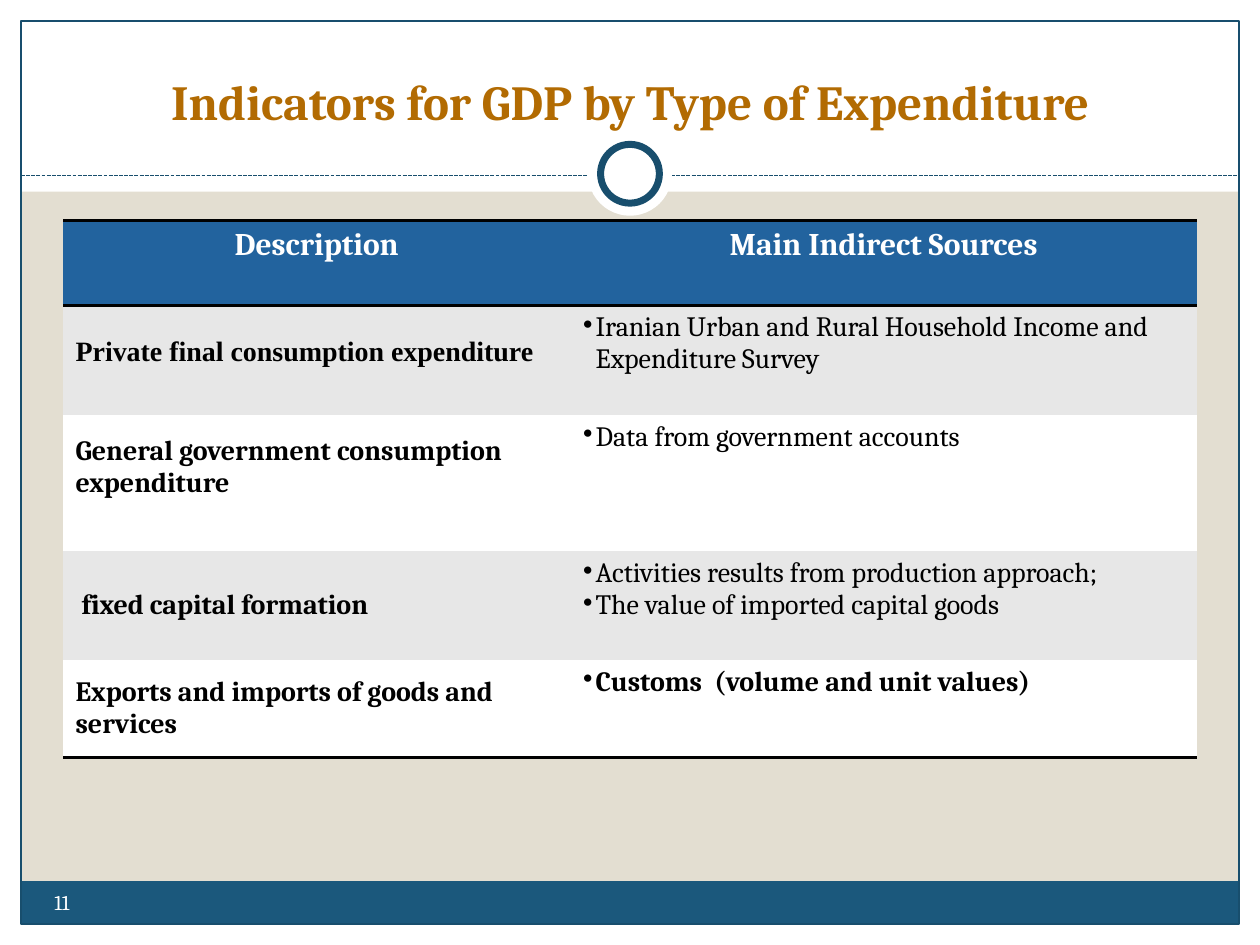
from dataclasses import dataclass
from lxml.etree import SubElement as Sub
from pptx import Presentation
from pptx.dml.color import RGBColor as RGB
from pptx.enum.dml import MSO_LINE as Dash
from pptx.enum.shapes import MSO_CONNECTOR as Conn, MSO_SHAPE as Kind
from pptx.enum.text import MSO_ANCHOR as Anchor, PP_ALIGN as Align
from pptx.oxml import parse_xml
from pptx.oxml.ns import nsdecls, qn
from pptx.util import Pt

PLAIN = "{2D5ABB26-0587-4C30-8999-92F81FD0307C}"


@dataclass(frozen=True)
class Theme:
    font: str = "Cambria"
    serif: str = "Times New Roman"
    sand: str = "E3DED1"
    white: str = "FFFFFF"
    black: str = "000000"
    gray: str = "E7E7E7"
    blue: str = "22639E"
    teal: str = "1B587C"
    edge: str = "184E6D"
    gold: str = "B26B02"
    title: int = 28
    head: int = 18
    body: int = 16
    small: int = 12


class Deck:
    def __init__(self, theme):
        self.theme = theme
        self.file = Presentation()
        self.file.slide_width, self.file.slide_height = Pt(720), Pt(540)
        self.slide = self.file.slides.add_slide(self.file.slide_layouts[5])
        self.shapes = self.slide.shapes
        fill = self.slide.background.fill
        fill.solid()
        fill.fore_color.rgb = RGB.from_string(theme.sand)

    def shape(self, kind, box, fill=None, line=None, width=0.75):
        item = self.shapes.add_shape(kind, *map(Pt, box))
        item.shadow.inherit = False
        if fill:
            item.fill.solid()
            item.fill.fore_color.rgb = RGB.from_string(fill)
        else:
            item.fill.background()
        if line:
            item.line.color.rgb = RGB.from_string(line)
            item.line.width = Pt(width)
        else:
            item.line.fill.background()

    def dashes(self, left, right, y):
        item = self.shapes.add_connector(Conn.STRAIGHT, *map(Pt, (left, y, right, y)))
        item.line.color.rgb = RGB.from_string(self.theme.edge)
        item.line.width = Pt(0.75)
        item.line.dash_style = Dash.SQUARE_DOT
        Sub(item._element.spPr, qn("a:effectLst"))

    def style(self, para, size, color, bold=False, align=Align.LEFT, font=None):
        para.alignment = align
        para.font.name = font or self.theme.font
        para.font.size = Pt(size)
        para.font.bold = bold
        para.font.color.rgb = RGB.from_string(color)

    def title(self, text, box):
        item = self.shapes.title
        item.left, item.top, item.width, item.height = map(Pt, box)
        self.shapes._spTree.append(item._element)
        frame = item.text_frame
        frame.text = text
        frame.vertical_anchor = Anchor.BOTTOM
        self.style(frame.paragraphs[0], self.theme.title, self.theme.gold, True, Align.CENTER)

    def label(self, text, box):
        frame = self.shapes.add_textbox(*map(Pt, box)).text_frame
        frame.word_wrap = True
        frame.text = text
        self.style(frame.paragraphs[0], self.theme.small, self.theme.white)

    def bullet(self, para):
        props = para._p.get_or_add_pPr()
        props.set("marL", str(Pt(7.2)))
        props.set("indent", str(-Pt(7.2)))
        mark = parse_xml(f'<a:buChar {nsdecls("a")} char="•"/>')
        props.insert_element_before(mark, "a:tabLst", "a:defRPr", "a:extLst")

    def rule(self, cell, sides):
        props = cell._tc.get_or_add_tcPr()
        for side in sides:
            props.insert(0, parse_xml(
                f'<a:ln{side} {nsdecls("a")} w="{Pt(2)}"><a:solidFill>'
                f'<a:srgbClr val="{self.theme.black}"/></a:solidFill></a:ln{side}>'))

    def paint(self, cell, color):
        cell.fill.solid()
        cell.fill.fore_color.rgb = RGB.from_string(color)

    def table(self, heads, rows, spot, cols, tall):
        look = self.theme
        size = sum(cols), sum(tall)
        grid = self.shapes.add_table(len(tall), len(cols), *map(Pt, spot + size)).table
        grid._tbl.tblPr.find(qn("a:tableStyleId")).text = PLAIN
        for col, width in zip(grid.columns, cols):
            col.width = Pt(width)
        for row, height in zip(grid.rows, tall):
            row.height = Pt(height)
        for cell, text in zip(grid.rows[0].cells, heads):
            cell.text = text
            self.paint(cell, look.blue)
            self.rule(cell, "BT")
            self.style(cell.text_frame.paragraphs[0], look.head, look.white, True, Align.CENTER)
        for i, (name, notes, bold, font, space, pad) in enumerate(rows, 1):
            left, right = grid.rows[i].cells
            left.text, right.text = name, "\n".join(notes)
            left.vertical_anchor = Anchor.MIDDLE
            left.margin_bottom = Pt(3.6 + pad)
            para = left.text_frame.paragraphs[0]
            para.line_spacing = space
            self.style(para, look.body, look.black, True, font=font)
            for para in right.text_frame.paragraphs:
                self.style(para, look.body, look.black, bold)
                self.bullet(para)
            for cell in (left, right):
                self.paint(cell, look.gray if i % 2 else look.white)
                if i == len(rows):
                    self.rule(cell, "B")


def main():
    look = Theme()
    deck = Deck(look)
    rim = 12
    for box in ((0, 528, 720, rim), (0, 0, 720, 109.5),
                (0, 0, rim, 540), (720 - rim, 0, rim, 540)):
        deck.shape(Kind.RECTANGLE, box, look.white)
    deck.shape(Kind.RECTANGLE, (rim, 503.5, 696, 24.5), look.teal)
    deck.shape(Kind.RECTANGLE, (rim, rim, 696, 516), None, look.edge)
    deck.dashes(rim, 720 - rim, 100.5)
    deck.shape(Kind.OVAL, (336, 75.3, 48, 48), look.white)
    deck.shape(Kind.OVAL, (343.2, 82.5, 33.6, 33.6), look.white, look.edge, 4)
    deck.title("Indicators for GDP by Type of Expenditure", (24, 18, 672, 60))
    rows = (
        ("Private final consumption expenditure",
         ["Iranian Urban and Rural Household Income and Expenditure Survey"],
         False, look.serif, 1.5, 18),
        ("General government consumption expenditure",
         ["Data from government accounts"], False, look.font, 1, 18),
        (" fixed capital formation",
         ["Activities results from production approach;",
          "The value of imported capital goods"], False, look.font, 1, 0),
        ("Exports and imports of goods and services",
         ["Customs  (volume and unit values)"], True, look.font, 1, 0),
    )
    deck.table(("Description", "Main Indirect Sources"), rows, (36, 126),
               (290, 358), (48.5, 62.5, 78, 62, 56))
    deck.label("11", (24, 504.5, 282, 28.8))
    deck.file.save("out.pptx")


if __name__ == "__main__":
    main()
